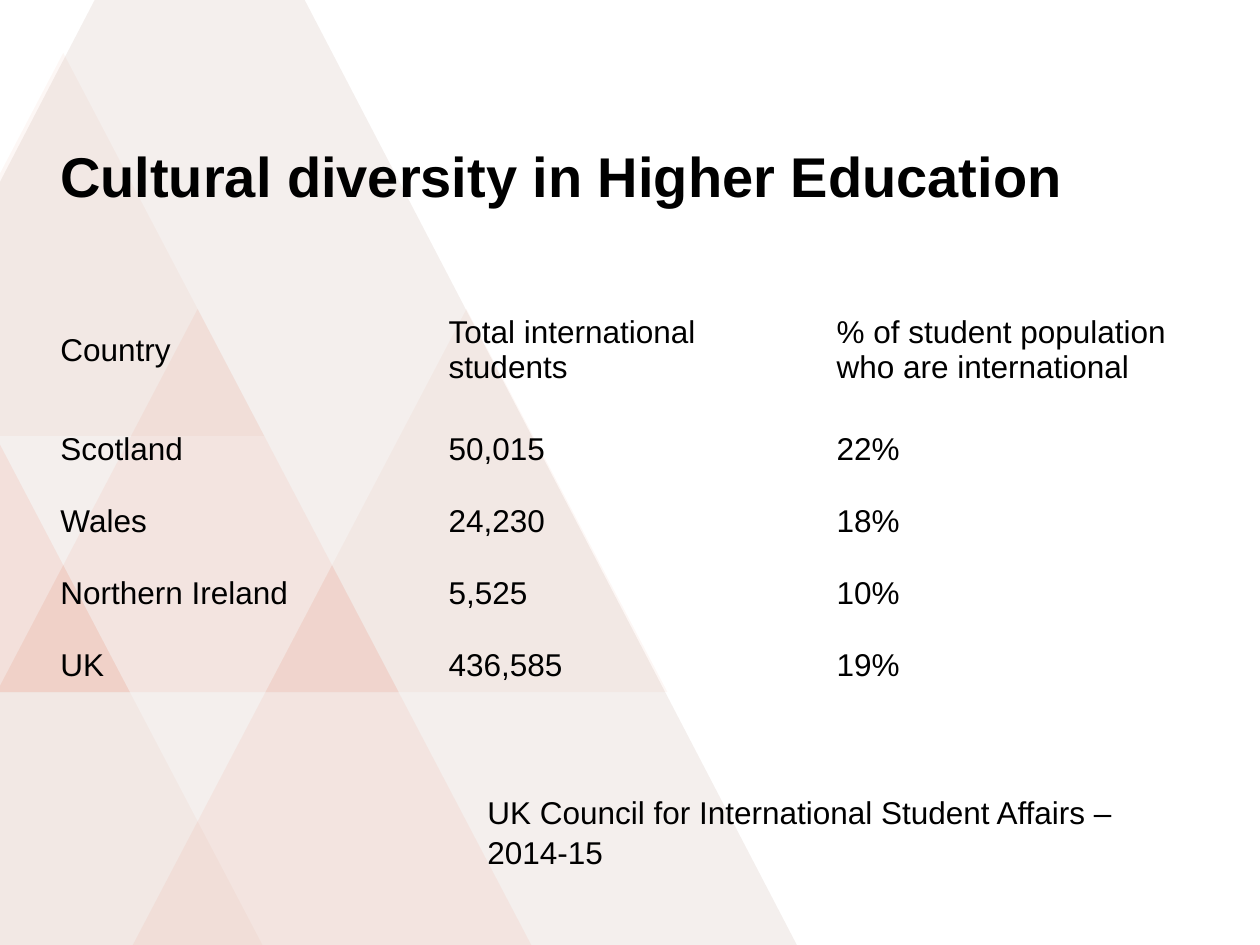
"""Build a slide on cultural diversity in UK higher education."""
from lxml.etree import SubElement
from pptx import Presentation
from pptx.dml.color import RGBColor
from pptx.enum.shapes import MSO_SHAPE
from pptx.enum.text import MSO_ANCHOR
from pptx.oxml.ns import qn
from pptx.util import Pt

FONT = "Arial"
BLACK = RGBColor(0x00, 0x00, 0x00)
BROWN = RGBColor(0x6A, 0x21, 0x00)
RUST = RGBColor(0xD5, 0x4A, 0x19)
CORAL = RGBColor(0xEF, 0x61, 0x3F)
NO_GRID_STYLE = "{2D5ABB26-0587-4C30-8999-92F81FD0307C}"

SMALL_WIDTH, SMALL_HEIGHT = 229.68, 218.88
LATTICE_LEFT, LATTICE_TOP = -155.5, 30.24
COLUMN_STEP, ROW_STEP = 76.8, 146.4
SMALL_TRIANGLES = [
    (1, 0, RUST, 4),
    (0, 1, CORAL, 10),
    (1, 2, RUST, 4),
    (3, 2, CORAL, 7),
    (4, 1, RUST, 4),
    (2, 1, CORAL, 7),
]

COLUMN_WIDTH, HEADER_HEIGHT, COUNTRY_HEIGHT = 221.76, 72, 41.14
STUDENT_FIGURES = [
    ("Country", "Total international students",
     "% of student population who are international"),
    ("Scotland", "50,015", "22%"),
    ("Wales", "24,230", "18%"),
    ("Northern Ireland", "5,525", "10%"),
    ("UK", "436,585", "19%"),
]


def add_triangle(slide, left, top, width, height, colour, opacity):
    """Add a borderless triangle with the given percentage of opacity."""
    triangle = slide.shapes.add_shape(
        MSO_SHAPE.ISOSCELES_TRIANGLE, Pt(left), Pt(top), Pt(width), Pt(height))
    triangle.shadow.inherit = False
    triangle.line.fill.background()
    triangle.fill.solid()
    triangle.fill.fore_color.rgb = colour
    tint = triangle.fill._xPr.find(qn("a:solidFill"))[0]
    SubElement(tint, qn("a:alpha"), val=str(opacity * 1000))


def add_run(paragraph, text, size, bold=False):
    """Add one black run to a paragraph."""
    run = paragraph.add_run()
    run.text = text
    run.font.name = FONT
    run.font.size = Pt(size)
    run.font.bold = bold
    run.font.color.rgb = BLACK


def add_text(slide, left, top, width, height, anchor):
    """Add a wrapping text box and return its first paragraph."""
    frame = slide.shapes.add_textbox(
        Pt(left), Pt(top), Pt(width), Pt(height)).text_frame
    frame.word_wrap = True
    frame.vertical_anchor = anchor
    return frame.paragraphs[0]


def add_figures_table(slide, left, top):
    """Add the unruled table of student figures."""
    row_heights = [HEADER_HEIGHT] + [COUNTRY_HEIGHT] * (len(STUDENT_FIGURES) - 1)
    column_count = len(STUDENT_FIGURES[0])
    table = slide.shapes.add_table(
        len(STUDENT_FIGURES), column_count, Pt(left), Pt(top),
        Pt(COLUMN_WIDTH * column_count), Pt(sum(row_heights))).table
    table.first_row = table.horz_banding = False
    table._tbl.tblPr.find(qn("a:tableStyleId")).text = NO_GRID_STYLE
    for column in table.columns:
        column.width = Pt(COLUMN_WIDTH)
    for row, height, figures in zip(table.rows, row_heights, STUDENT_FIGURES):
        row.height = Pt(height)
        for cell, figure in zip(row.cells, figures):
            cell.fill.background()
            cell.vertical_anchor = MSO_ANCHOR.MIDDLE
            add_run(cell.text_frame.paragraphs[0], figure, 18)


def main():
    """Build and save the slide."""
    deck = Presentation()
    deck.slide_width, deck.slide_height = Pt(720), Pt(540)
    slide = deck.slides.add_slide(deck.slide_layouts[6])

    add_triangle(slide, -228.24, -115.2, 684.72, 657.36, BROWN, 7)
    for column, row, colour, opacity in SMALL_TRIANGLES:
        add_triangle(slide, LATTICE_LEFT + column * COLUMN_STEP,
                     LATTICE_TOP + row * ROW_STEP,
                     SMALL_WIDTH, SMALL_HEIGHT, colour, opacity)

    add_figures_table(slide, 27.36, 164.16)
    title = add_text(slide, 27.36, 92.16, 665.28, 54.72, MSO_ANCHOR.MIDDLE)
    add_run(title, "Cultural diversity in Higher Education", 32, bold=True)
    title.add_line_break()
    title.font.size = Pt(32)
    credit = add_text(slide, 271.44, 448.56, 403.2, 51.12, MSO_ANCHOR.TOP)
    credit.line_spacing = 1.06
    add_run(credit, "UK Council for International Student Affairs – 2014-15", 18)
    deck.save("out.pptx")


if __name__ == "__main__":
    main()
